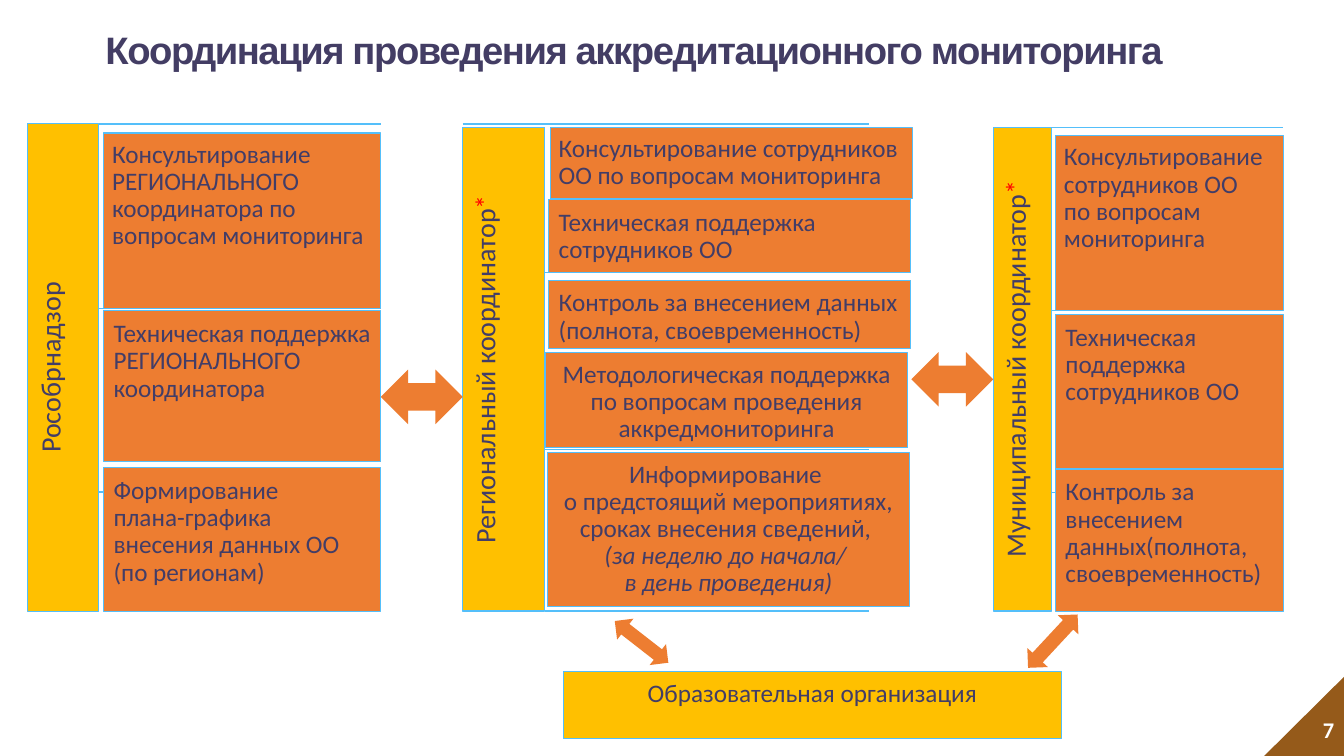
from lxml.etree import SubElement
from pptx import Presentation
from pptx.dml.color import RGBColor
from pptx.enum.shapes import MSO_CONNECTOR, MSO_SHAPE
from pptx.enum.text import MSO_ANCHOR, MSO_AUTO_SIZE, PP_ALIGN
from pptx.oxml.ns import qn
from pptx.util import Pt

GOLD, ORANGE, BROWN = "FFC000", "ED7D31", "955A1A"
BLUE, INK, TITLE_INK = "54BFFA", "423D67", "433D64"
RED, WHITE = "FF0000", "FFFFFF"
COLUMN_BOTTOM = 436.5


def color(value):
    return RGBColor.from_string(value)


class SlideBuilder:
    font_name = "Calibri"

    def __init__(self, page):
        self.page = page

    def style(self, paragraph, size, ink, align, bold=None, name=None):
        paragraph.alignment = align
        paragraph.line_spacing = 0.9
        font = paragraph.font
        font.name, font.size, font.bold = name or self.font_name, Pt(size), bold
        font.color.rgb = color(ink)

    def spans(self, paragraph, text, italic=None, ink=None):
        for index, part in enumerate(text.split("\n")):
            if index:
                paragraph.add_line_break()
            if part:
                span = paragraph.add_run()
                span.text = part
                span.font.italic = italic
                if ink:
                    span.font.color.rgb = color(ink)

    def title(self, text, left, top, width, height):
        box = self.page.shapes.title
        box.left, box.top, box.width, box.height = map(Pt, (left, top, width, height))
        frame = box.text_frame
        frame.auto_size = MSO_AUTO_SIZE.NONE
        frame.vertical_anchor = MSO_ANCHOR.MIDDLE
        para = frame.paragraphs[0]
        self.style(para, 27.3, TITLE_INK, PP_ALIGN.CENTER, True, "Arial")
        span = para.add_run()
        span.text = text
        span._r.get_or_add_rPr().set("spc", "-100")

    def shape(self, kind, left, top, width, height, fill, rotation=0):
        shape = self.page.shapes.add_shape(kind, *map(Pt, (left, top, width, height)))
        shape.shadow.inherit = False
        shape.fill.solid()
        shape.fill.fore_color.rgb = color(fill)
        shape.line.fill.background()
        shape.rotation = rotation
        return shape

    def box(self, left, top, width, height, paragraphs, fill=ORANGE,
            align=PP_ALIGN.LEFT, size=18, inset=6, vertical=False):
        """Each paragraph is a list of (text, format) pairs."""
        box = self.shape(MSO_SHAPE.RECTANGLE, left, top, width, height, fill)
        box.line.color.rgb = color(BLUE)
        box.line.width = Pt(0.75)
        frame = box.text_frame
        frame.word_wrap = True
        frame.vertical_anchor = MSO_ANCHOR.TOP
        frame.margin_left = frame.margin_right = Pt(inset)
        frame.margin_top = frame.margin_bottom = Pt(inset)
        if vertical:
            frame._txBody.bodyPr.set("vert", "vert270")
        for index, parts in enumerate(paragraphs):
            para = frame.add_paragraph() if index else frame.paragraphs[0]
            self.style(para, size, INK, align)
            for text, look in parts:
                self.spans(para, text, **look)

    def rule(self, left, right, top):
        line = self.page.shapes.add_connector(
            MSO_CONNECTOR.STRAIGHT, Pt(left), Pt(top), Pt(right), Pt(top))
        line.line.color.rgb = color(BLUE)
        line.line.width = Pt(1)
        SubElement(line._element.spPr, qn("a:effectLst"))

    def arrow(self, left, top, width, height, rotation=0):
        self.shape(MSO_SHAPE.LEFT_RIGHT_ARROW, left, top, width, height, ORANGE, rotation)

    def column(self, left, top, width, name, starred, rule_right, rules):
        """Gold heading bar, with thin rules running to its right."""
        for height in rules:
            self.rule(left + width, rule_right, height)
        parts = [(name, {})] + ([("*", {"ink": RED})] if starred else [])
        self.box(left, top, width, COLUMN_BOTTOM - top, [parts], GOLD,
                 PP_ALIGN.CENTER, 20, vertical=True)

    def page_number(self, text, left, top, width, height):
        box = self.page.shapes.add_textbox(*map(Pt, (left, top, width, height)))
        frame = box.text_frame
        frame.word_wrap = True
        frame.vertical_anchor = MSO_ANCHOR.MIDDLE
        para = frame.paragraphs[0]
        self.style(para, 16, WHITE, PP_ALIGN.RIGHT, True)
        self.spans(para, text)


def plain(*texts):
    return [[(text, {})] for text in texts]


def main():
    deck = Presentation()
    deck.slide_width, deck.slide_height = Pt(960), Pt(540)
    builder = SlideBuilder(deck.slides.add_slide(deck.slide_layouts[5]))

    # Title and page corner
    builder.title("Координация проведения аккредитационного мониторинга", 13.5, 11, 879, 52)
    builder.shape(MSO_SHAPE.RIGHT_TRIANGLE, 903, 483, 57, 57.5, BROWN, 270)
    builder.page_number("7", 744, 507.5, 216, 29)

    # Heading bars: left, top, width, name, starred, right end of rules, rules
    for column in (
        (20, 88.5, 50.5, "Рособрнадзор", False, 272, (88.5, 220.5, 351.5)),
        (330.5, 91, 58.5, "Региональный координатор", True, 620.5, (194.5, 321, COLUMN_BOTTOM)),
        (709.5, 91, 41.5, "Муниципальный координатор", True, 916.5, (91, 222, 352)),
    ):
        builder.column(*column)
    builder.rule(330.5, 620.5, 88.5)

    # Tasks: left, top, width, height, paragraphs, inset
    for left, top, width, height, paragraphs, inset in (
        (74, 95, 198, 125.5, plain(
            "Консультирование РЕГИОНАЛЬНОГО координатора по вопросам мониторинга"), 6),
        (74, 222, 198, 108, plain("Техническая поддержка РЕГИОНАЛЬНОГО координатора"), 7.2),
        (74, 334, 198, 102.5, plain(
            "Формирование", "плана-графика внесения данных ОО (по регионам)"), 7.2),
        (393, 91, 258.5, 51, plain(
            "Консультирование сотрудников ОО по вопросам мониторинга"), 6),
        (392, 142.5, 258.5, 52, plain("Техническая поддержка сотрудников ОО"), 7.2),
        (392, 200, 258.5, 49, plain(
            "Контроль за внесением данных (полнота, своевременность)"), 7.2),
        (754, 97, 162.5, 124.5, plain(
            "Консультирование сотрудников ОО\nпо вопросам мониторинга"), 6),
        (754, 335, 162.5, 101.5, plain(
            "Контроль за внесением данных(полнота, своевременность)"), 7.2),
        (754, 224.5, 162.5, 110.5, plain("Техническая поддержка сотрудников ОО"), 7.2),
    ):
        builder.box(left, top, width, height, paragraphs, inset=inset)

    # Centred tasks of the regional coordinator
    builder.box(389.5, 252, 259, 67.5, plain(
        "Методологическая поддержка по вопросам проведения аккредмониторинга"),
        align=PP_ALIGN.CENTER)
    builder.box(391, 323.5, 258.5, 109.5, [[
        ("Информирование \nо предстоящий мероприятиях, сроках внесения сведений, \n", {}),
        ("(за неделю до начала/ \nв день проведения)", {"italic": True}),
    ]], align=PP_ALIGN.CENTER)

    # Educational organisation
    builder.box(402.5, 480, 355.5, 47.5, plain("Образовательная организация"),
                GOLD, PP_ALIGN.CENTER)

    # Two-way arrows
    builder.arrow(272, 264, 58.5, 39)
    builder.arrow(651, 251.5, 58.5, 39)
    builder.arrow(434, 449, 48.5, 19, 37.9)
    builder.arrow(726, 448, 52, 20, 132.9)

    deck.save("out.pptx")


if __name__ == "__main__":
    main()
